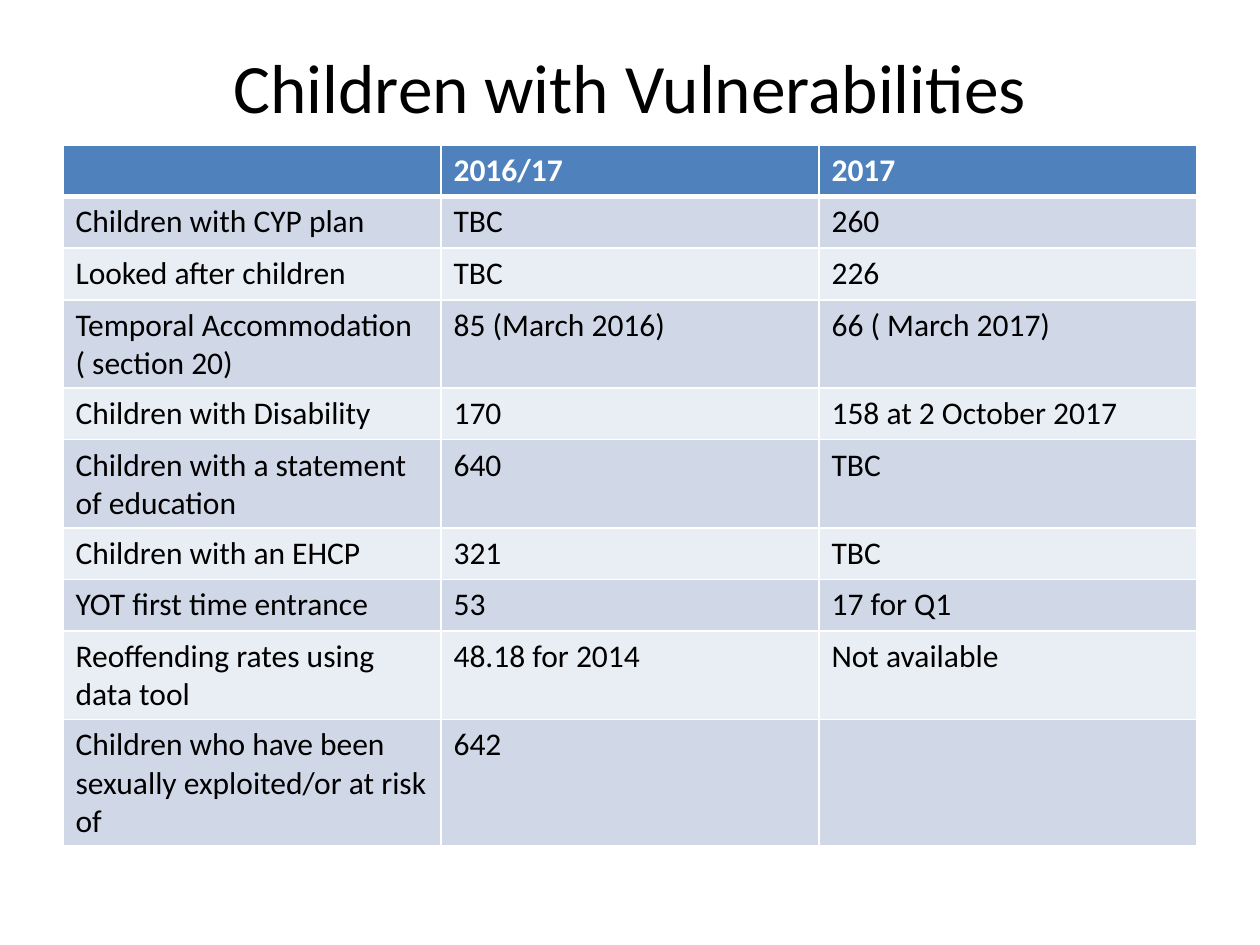
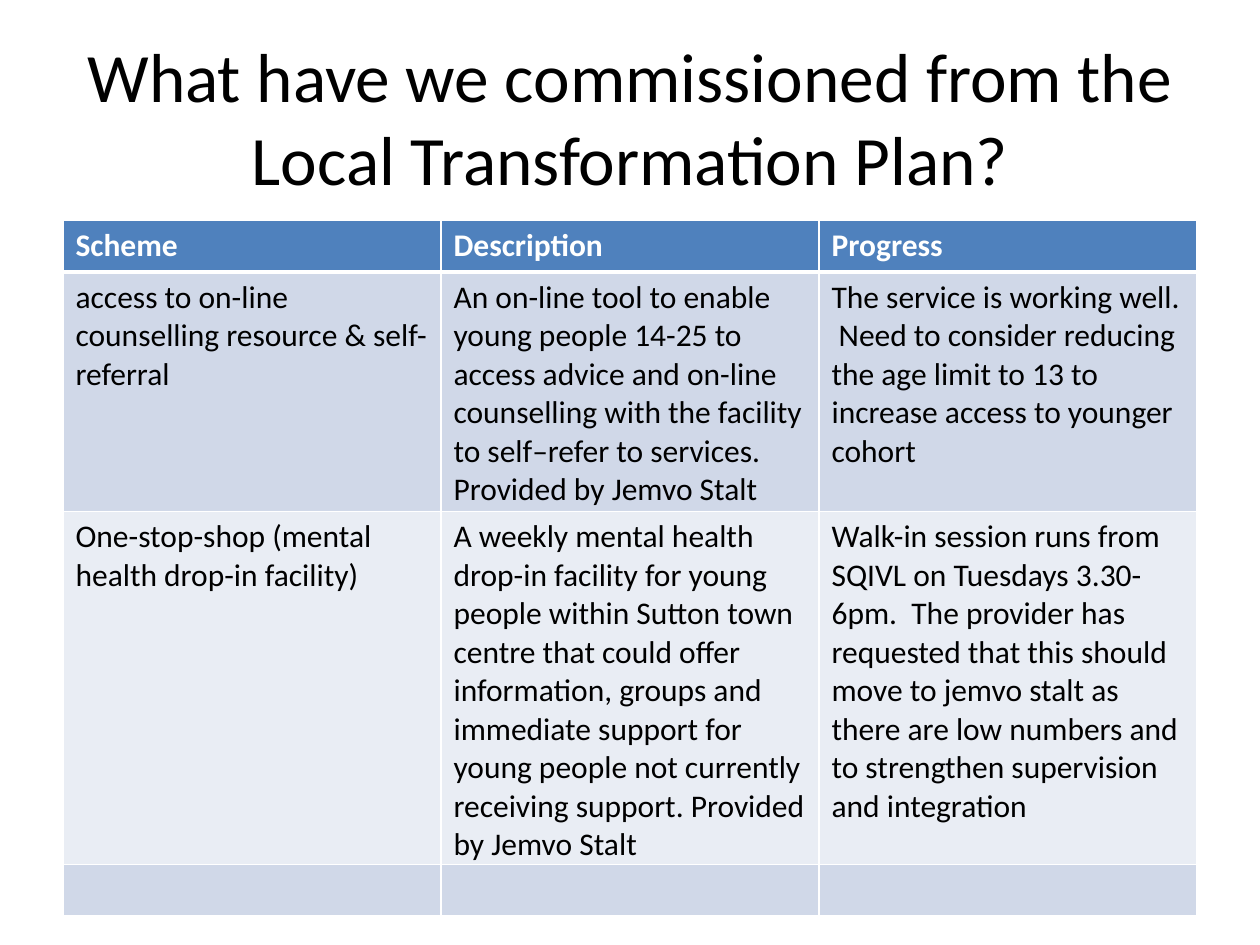
from lxml.etree import SubElement
from pptx import Presentation
from pptx.dml.color import RGBColor
from pptx.enum.text import MSO_ANCHOR, PP_ALIGN
from pptx.oxml.ns import qn
from pptx.util import Inches, Pt

COLORS = {
    "text": "000000",
    "header": "4F81BD",
    "header_text": "FFFFFF",
    "odd_row": "D0D8E8",
    "even_row": "E9EDF4",
    "border": "FFFFFF",
}
FONT = "Calibri"
TITLE_SIZE = 39.6
TABLE_SIZE = 18

# The slide is a grid of 20 columns by 150 rows.
COLUMN = Inches(0.5)
ROW = Inches(0.05)
MARGIN_COLUMNS = 1
CONTENT_COLUMNS = 18
TITLE_TOP = 6
TABLE_ROW_HEIGHT = Inches(0.41)
THIN, THICK = 1, 3

VULNERABILITIES = [
    ["", "2016/17", "2017"],
    ["Children with CYP plan", "TBC", "260"],
    ["Looked after children", "TBC", "226"],
    ["Temporal Accommodation ( section 20)", "85 (March 2016)", "66 ( March 2017)"],
    ["Children with Disability", "170", "158 at 2 October 2017"],
    ["Children with a statement of education", "640", "TBC"],
    ["Children with an EHCP", "321", "TBC"],
    ["YOT first time entrance", "53", "17 for Q1"],
    ["Reoffending rates using data tool", "48.18 for 2014", "Not available"],
    ["Children who have been sexually exploited/or at risk of", "642", ""],
]

SCHEMES = [
    ["Scheme", "Description", "Progress"],
    [
        "access to on-line counselling resource & self- referral",
        "An on-line tool to enable young people 14-25 to access advice and "
        "on-line counselling with the facility to self–refer to services. "
        "Provided by Jemvo Stalt",
        "The service is working well.  Need to consider reducing the age limit "
        "to 13 to increase access to younger cohort",
    ],
    [
        "One-stop-shop (mental health drop-in facility)",
        "A weekly mental health drop-in facility for young people within Sutton "
        "town centre that could offer information, groups and immediate support "
        "for young people not currently receiving support. Provided by Jemvo Stalt",
        "Walk-in session runs from SQIVL on Tuesdays 3.30-6pm.  The provider has "
        "requested that this should move to jemvo stalt as there are low numbers "
        "and to strengthen supervision and integration",
    ],
    ["", "", ""],
]


class SlideBuilder:
    def __init__(self, deck):
        self.deck = deck
        self.page = None

    def add_page(self):
        self.page = self.deck.slides.add_slide(self.deck.slide_layouts[6])

    def format_text(self, paragraph, size, color, bold=False):
        for span in paragraph.runs:
            span.font.name = FONT
            span.font.size = Pt(size)
            span.font.bold = bold
            span.font.color.rgb = RGBColor.from_string(COLORS[color])

    def add_title(self, text, rows):
        box = self.page.shapes.add_textbox(
            MARGIN_COLUMNS * COLUMN, TITLE_TOP * ROW,
            CONTENT_COLUMNS * COLUMN, int(rows * ROW))
        frame = box.text_frame
        frame.word_wrap = True
        frame.vertical_anchor = MSO_ANCHOR.MIDDLE
        frame.text = text
        para = frame.paragraphs[0]
        para.alignment = PP_ALIGN.CENTER
        self.format_text(para, TITLE_SIZE, "text")

    def add_borders(self, cell, top, bottom):
        properties = cell._tc.get_or_add_tcPr()
        widths = {"a:lnL": THIN, "a:lnR": THIN, "a:lnT": top, "a:lnB": bottom}
        for side, width in widths.items():
            line = SubElement(properties, qn(side), w=str(Pt(width)))
            fill = SubElement(line, qn("a:solidFill"))
            SubElement(fill, qn("a:srgbClr"), val=COLORS["border"])

    def style_cell(self, cell, row_index):
        is_header = row_index == 0
        self.add_borders(cell, top=THICK if row_index == 1 else THIN,
                         bottom=THICK if is_header else THIN)
        band = "odd_row" if row_index % 2 else "even_row"
        cell.fill.solid()
        cell.fill.fore_color.rgb = RGBColor.from_string(
            COLORS["header" if is_header else band])
        self.format_text(cell.text_frame.paragraphs[0], TABLE_SIZE,
                         "header_text" if is_header else "text", is_header)

    def add_table(self, records, top):
        table = self.page.shapes.add_table(
            len(records), len(records[0]), MARGIN_COLUMNS * COLUMN, top * ROW,
            CONTENT_COLUMNS * COLUMN, len(records) * TABLE_ROW_HEIGHT).table
        for row_index, record in enumerate(records):
            for column_index, text in enumerate(record):
                cell = table.cell(row_index, column_index)
                cell.text_frame.text = text
                self.style_cell(cell, row_index)


def main():
    deck = Presentation()
    deck.slide_width = 20 * COLUMN
    deck.slide_height = 150 * ROW
    builder = SlideBuilder(deck)

    builder.add_page()
    builder.add_title("Children with Vulnerabilities", rows=15.4)
    builder.add_table(VULNERABILITIES, top=23)

    builder.add_page()
    builder.add_title(
        "What have we commissioned from the Local Transformation Plan?", rows=25)
    builder.add_table(SCHEMES, top=35)

    deck.save("out.pptx")


if __name__ == "__main__":
    main()
